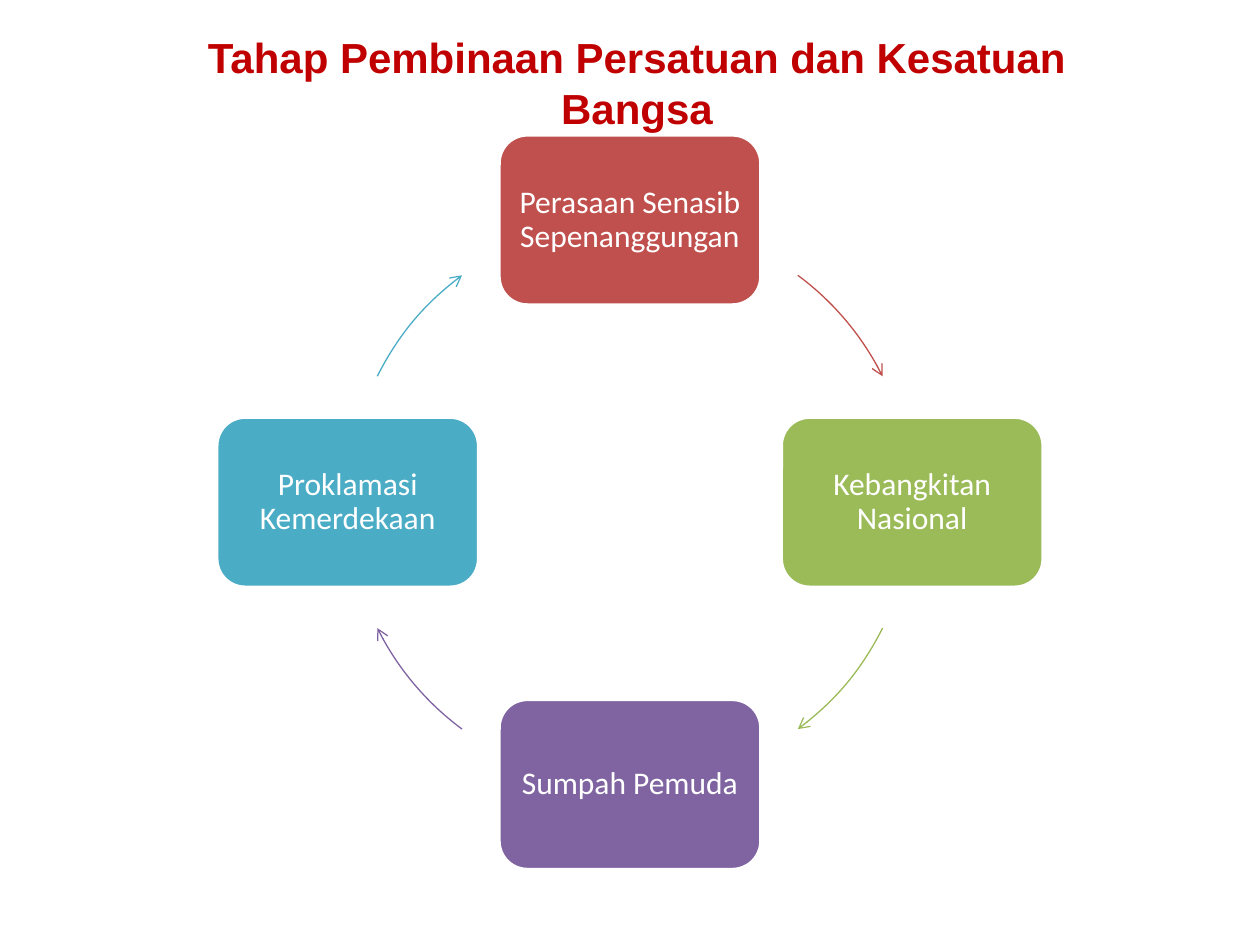
from math import cos, radians, sin

from lxml import etree
from pptx import Presentation
from pptx.dml.color import RGBColor
from pptx.enum.shapes import MSO_SHAPE
from pptx.enum.text import MSO_ANCHOR, MSO_AUTO_SIZE, PP_ALIGN
from pptx.oxml.ns import qn
from pptx.util import Cm, Pt

WHITE = RGBColor(0xFF, 0xFF, 0xFF)
TITLE_RED = RGBColor(0xC0, 0x00, 0x00)
STAGES = [
    ("Perasaan Senasib Sepenanggungan", RGBColor(0xC0, 0x50, 0x4D)),
    ("Kebangkitan Nasional", RGBColor(0x9B, 0xBB, 0x59)),
    ("Sumpah Pemuda", RGBColor(0x80, 0x64, 0xA2)),
    ("Proklamasi Kemerdekaan", RGBColor(0x4B, 0xAC, 0xC6)),
]
STAGE_WIDTH, STAGE_HEIGHT = Cm(5.28), Cm(3.43)
# Degrees kept free beside the top and bottom stages, and beside the side ones.
STAGE_GAPS = (36.5, 26.5)
ARROW_SWEEP = 90 - sum(STAGE_GAPS)


def format_text(text_frame, font_name, size, color, bold=False):
    paragraph = text_frame.paragraphs[0]
    paragraph.alignment = PP_ALIGN.CENTER
    font = paragraph.runs[0].font
    font.name, font.size, font.bold = font_name, size, bold
    font.color.rgb = color


def add_title(slide, left, top, width, height):
    title = slide.shapes.title
    title.left, title.top, title.width, title.height = left, top, width, height
    text_frame = title.text_frame
    text_frame.text = "Tahap Pembinaan Persatuan dan Kesatuan Bangsa"
    text_frame.word_wrap = True
    text_frame.auto_size = MSO_AUTO_SIZE.NONE
    text_frame.vertical_anchor = MSO_ANCHOR.TOP
    format_text(text_frame, "Arial", Pt(24), TITLE_RED, bold=True)


def add_stage(slide, left, top, text, color):
    shape = slide.shapes.add_shape(
        MSO_SHAPE.ROUNDED_RECTANGLE, left, top, STAGE_WIDTH, STAGE_HEIGHT)
    shape.shadow.inherit = False
    shape.fill.solid()
    shape.fill.fore_color.rgb = color
    shape.line.color.rgb = WHITE
    shape.line.width = Pt(2)
    text_frame = shape.text_frame
    text_frame.text = text
    text_frame.word_wrap = True
    text_frame.vertical_anchor = MSO_ANCHOR.MIDDLE
    text_frame.margin_left = text_frame.margin_right = Cm(0.1)
    text_frame.margin_top = text_frame.margin_bottom = Cm(0.18)
    text_frame.paragraphs[0].line_spacing = 0.9
    format_text(text_frame, "Calibri", Pt(18), WHITE)


def add_arc_arrow(slide, center_x, center_y, radius, start, color):
    """Draw a clockwise arrow on the circle, from the start angle in degrees."""
    arc = slide.shapes.add_shape(
        MSO_SHAPE.ARC, center_x - radius, center_y - radius, 2 * radius, 2 * radius)
    # Angles are stored in 1/60000 degree, adjustments in 1/100000.
    arc.adjustments[0] = start % 360 * 0.6
    arc.adjustments[1] = (start + ARROW_SWEEP) % 360 * 0.6
    arc.shadow.inherit = False
    arc.fill.background()
    arc.line.color.rgb = color
    arc.line.width = Pt(0.75)
    line = arc.element.spPr.find(qn("a:ln"))
    etree.SubElement(line, qn("a:tailEnd"), type="arrow")


def add_cycle(slide, left, top, width, height):
    center_x, center_y = left + width // 2, top + height // 2
    radius = (width - STAGE_WIDTH) // 2
    for index, (text, color) in enumerate(STAGES):
        angle = index * 360 / len(STAGES) - 90
        stage_x = center_x + round(radius * cos(radians(angle)))
        stage_y = center_y + round(radius * sin(radians(angle)))
        add_stage(slide, stage_x - STAGE_WIDTH // 2, stage_y - STAGE_HEIGHT // 2,
                  text, color)
        arrow_start = angle + STAGE_GAPS[index % 2]
        add_arc_arrow(slide, center_x, center_y, radius, arrow_start, color)


def main():
    presentation = Presentation()
    presentation.slide_width, presentation.slide_height = Cm(25.4), Cm(19.05)
    slide = presentation.slides.add_slide(presentation.slide_layouts[5])
    add_title(slide, Cm(2.49), Cm(0.51), Cm(20.7), Cm(3.18))
    add_cycle(slide, Cm(4.37), Cm(2.72), Cm(16.66), Cm(14.81))
    presentation.save("out.pptx")


if __name__ == "__main__":
    main()
